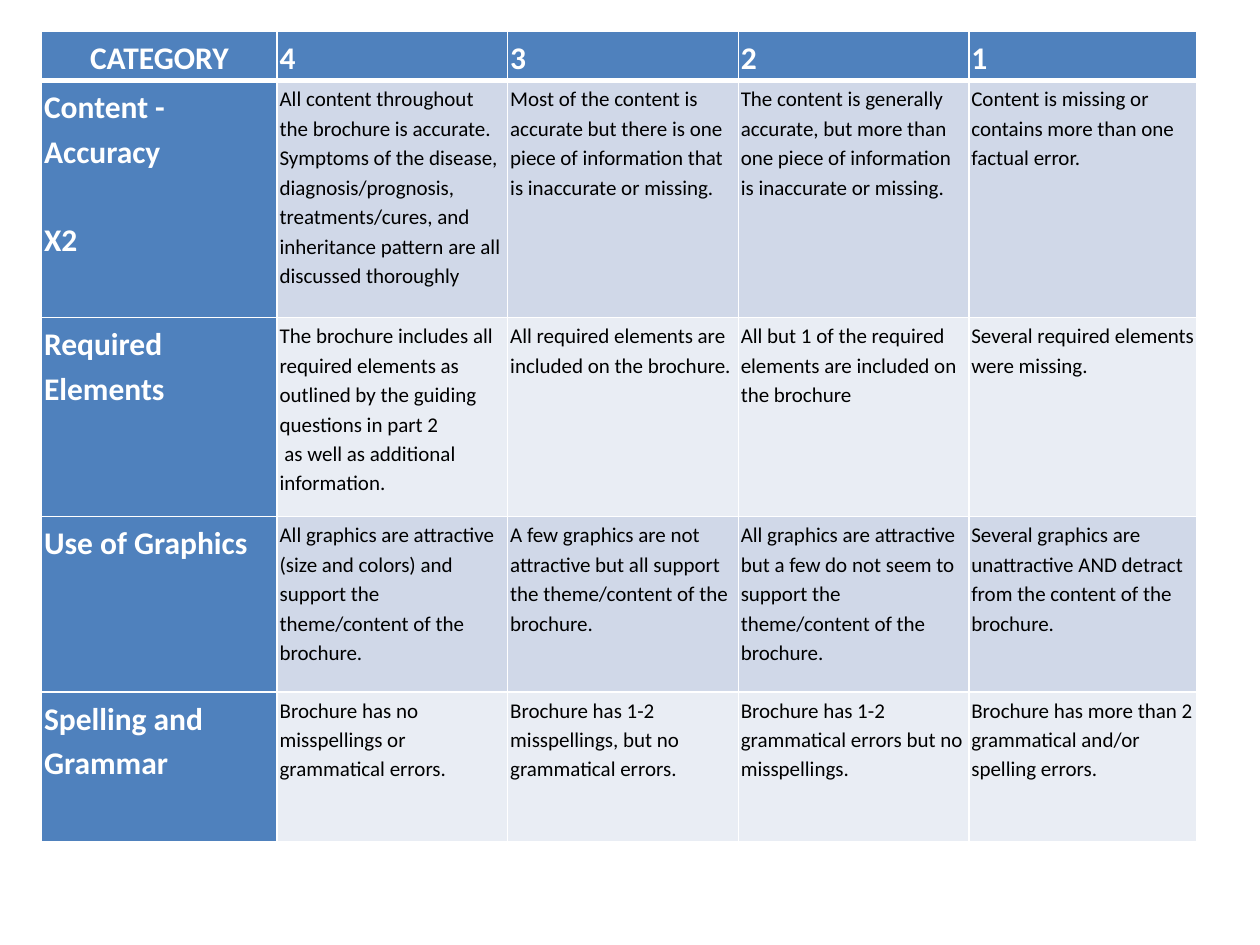
from dataclasses import dataclass

from lxml import etree
from pptx import Presentation
from pptx.dml.color import RGBColor
from pptx.enum.text import MSO_ANCHOR, PP_ALIGN
from pptx.oxml.ns import qn
from pptx.util import Inches, Pt

CENTER, LEFT = PP_ALIGN.CENTER, PP_ALIGN.LEFT
TOP, BOTTOM = MSO_ANCHOR.TOP, MSO_ANCHOR.BOTTOM

# A line break inside a cell starts a new paragraph.
HEADINGS = ["CATEGORY", "4", "3", "2", "1"]
CRITERIA = [
    ["Content - Accuracy\nX2",
     "All content throughout the brochure is accurate. Symptoms of the disease, "
     "diagnosis/prognosis, treatments/cures, and inheritance pattern are all "
     "discussed thoroughly",
     "Most of the content is accurate but there is one piece of information that "
     "is inaccurate or missing.",
     "The content is generally accurate, but more than one piece of information "
     "is inaccurate or missing.",
     "Content is missing or contains more than one factual error."],
    ["Required Elements",
     "The brochure includes all required elements as outlined by the guiding "
     "questions in part 2\n as well as additional information.",
     "All required elements are included on the brochure.",
     "All but 1 of the required elements are included on the brochure",
     "Several required elements were missing."],
    ["Use of Graphics",
     "All graphics are attractive (size and colors) and support the theme/content "
     "of the brochure.",
     "A few graphics are not attractive but all support the theme/content of the "
     "brochure.",
     "All graphics are attractive but a few do not seem to support the "
     "theme/content of the brochure.",
     "Several graphics are unattractive AND detract from the content of the "
     "brochure."],
    ["Spelling and Grammar",
     "Brochure has no misspellings or grammatical errors.",
     "Brochure has 1-2 misspellings, but no grammatical errors.",
     "Brochure has 1-2 grammatical errors but no misspellings.",
     "Brochure has more than 2 grammatical and/or spelling errors."],
]

SLIDE_SIZE = (10, 7.5)
RUBRIC_CORNER = (0.33, 0.25)
COLUMN_WIDTHS = [1.87, 1.83, 1.83, 1.83, 1.81]
ROW_HEIGHTS = [0.32, 1.88, 1.58, 1.39, 1.19]
CELL_MARGIN = 0.02


@dataclass(frozen=True)
class Theme:
    font: str = "Calibri"
    label_size: int = 18
    body_size: int = 12
    line_spacing: float = 1.15
    label_gap: int = 25
    label_text: str = "FFFFFF"
    body_text: str = "000000"
    label_fill: str = "4F81BD"
    bands: tuple = ("D0D8E8", "E9EDF4")
    rule: str = "FFFFFF"
    thin: int = 1
    thick: int = 3


THEME = Theme()


def rule_cell(cell, row):
    """Draw the four borders, thick on the line under the headings."""
    widths = {
        "a:lnL": THEME.thin,
        "a:lnR": THEME.thin,
        "a:lnT": THEME.thick if row == 1 else THEME.thin,
        "a:lnB": THEME.thick if row == 0 else THEME.thin,
    }
    properties = cell._tc.get_or_add_tcPr()
    for position, (side, width) in enumerate(widths.items()):
        line = etree.Element(qn(side), w=str(Pt(width)))
        fill = etree.SubElement(line, qn("a:solidFill"))
        etree.SubElement(fill, qn("a:srgbClr"), val=THEME.rule)
        properties.insert(position, line)


def write_cell(cell, text, row, column):
    is_label = row == 0 or column == 0
    cell.margin_left = cell.margin_right = Inches(CELL_MARGIN)
    cell.margin_top = cell.margin_bottom = Inches(CELL_MARGIN)
    cell.vertical_anchor = BOTTOM if row == 0 else TOP
    cell.fill.solid()
    band = THEME.bands[(row - 1) % 2]
    cell.fill.fore_color.rgb = RGBColor.from_string(
        THEME.label_fill if is_label else band)
    rule_cell(cell, row)

    cell.text = text
    for index, paragraph in enumerate(cell.text_frame.paragraphs):
        paragraph.alignment = CENTER if row == column == 0 else LEFT
        paragraph.line_spacing = THEME.line_spacing
        if is_label and index:
            paragraph.space_before = Pt(THEME.label_gap)
        font = paragraph.font
        font.name = THEME.font
        font.bold = is_label
        font.size = Pt(THEME.label_size if is_label else THEME.body_size)
        font.color.rgb = RGBColor.from_string(
            THEME.label_text if is_label else THEME.body_text)


def main():
    deck = Presentation()
    deck.slide_width, deck.slide_height = map(Inches, SLIDE_SIZE)
    slide = deck.slides.add_slide(deck.slide_layouts[6])

    contents = [HEADINGS, *CRITERIA]
    extent = (sum(COLUMN_WIDTHS), sum(ROW_HEIGHTS))
    rubric = slide.shapes.add_table(
        len(contents), len(HEADINGS),
        *map(Inches, RUBRIC_CORNER + extent)).table
    for column, width in zip(rubric.columns, COLUMN_WIDTHS):
        column.width = Inches(width)
    for row, height in zip(rubric.rows, ROW_HEIGHTS):
        row.height = Inches(height)
    for row, texts in enumerate(contents):
        for column, text in enumerate(texts):
            write_cell(rubric.cell(row, column), text, row, column)

    deck.save("out.pptx")


if __name__ == "__main__":
    main()
